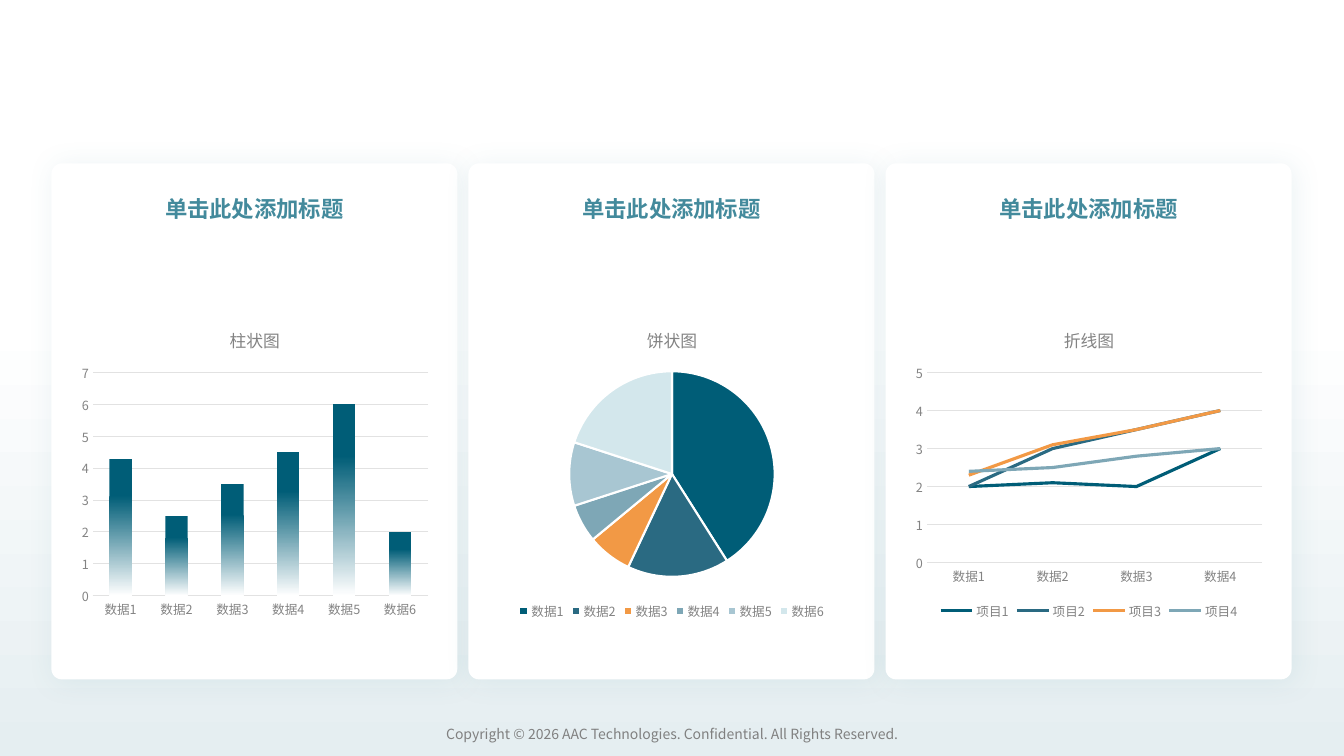
from lxml.etree import SubElement
from pptx import Presentation
from pptx.chart.data import CategoryChartData
from pptx.dml.color import RGBColor
from pptx.enum.chart import XL_CHART_TYPE, XL_LEGEND_POSITION, XL_TICK_MARK
from pptx.enum.shapes import MSO_SHAPE
from pptx.enum.text import MSO_ANCHOR, PP_ALIGN
from pptx.oxml import parse_xml
from pptx.oxml.ns import nsdecls, qn
from pptx.util import Inches, Pt

FACE = "Noto Sans CJK SC"
WHITE = RGBColor(0xFF, 0xFF, 0xFF)
MIST = RGBColor(0xE5, 0xEE, 0xF1)
TEAL = RGBColor(0x43, 0x8A, 0x9C)
GRAY = RGBColor(0x80, 0x80, 0x80)
LABEL = RGBColor(0x83, 0x83, 0x83)
RULE = RGBColor(0xE2, 0xE2, 0xE2)
DEEP = RGBColor(0x00, 0x5D, 0x77)
COLORS = [DEEP, RGBColor(0x2A, 0x6A, 0x82), RGBColor(0xF2, 0x99, 0x45),
          RGBColor(0x7E, 0xA7, 0xB6), RGBColor(0xA8, 0xC6, 0xD2),
          RGBColor(0xD3, 0xE7, 0xEC)]
SHADOW = f"""<a:effectLst {nsdecls('a')}>
<a:outerShdw blurRad="{Pt(20)}" dist="{Pt(3)}" dir="2160000" algn="ctr" rotWithShape="0">
<a:srgbClr val="{TEAL}"><a:alpha val="10000"/></a:srgbClr>
</a:outerShdw></a:effectLst>"""

CHARTS = [
    ("柱状图", XL_CHART_TYPE.COLUMN_CLUSTERED, 6, 7,
     {"柱状图": [4.3, 2.5, 3.5, 4.5, 6, 2]}),
    ("饼状图", XL_CHART_TYPE.PIE, 6, None,
     {"饼状图": [41, 16, 7, 6, 10, 20]}),
    ("折线图", XL_CHART_TYPE.LINE, 4, 5,
     {"项目1": [2, 2.1, 2, 3], "项目2": [2, 3, 3.5, 4],
      "项目3": [2.3, 3.1, 3.5, 4], "项目4": [2.4, 2.5, 2.8, 3]}),
]

deck = Presentation()
deck.slide_width, deck.slide_height = Inches(13.34), Inches(7.5)
slide = deck.slides.add_slide(deck.slide_layouts[6])
shapes = slide.shapes


def style(font, size, color, bold=False):
    """Set the face for both Latin and East Asian text."""
    font.size, font.bold = Pt(size), bold
    font.color.rgb = color
    font.name = FACE
    SubElement(font._rPr, qn("a:ea")).set("typeface", FACE)


def write(text, left, top, width, height, **look):
    frame = shapes.add_textbox(Inches(left), Inches(top),
                               Inches(width), Inches(height)).text_frame
    frame.word_wrap = True
    frame.vertical_anchor = MSO_ANCHOR.MIDDLE
    line = frame.paragraphs[0]
    line.alignment = PP_ALIGN.CENTER
    run = line.add_run()
    run.text = text
    style(run.font, **look)


# Background and footer
back = shapes.add_shape(MSO_SHAPE.RECTANGLE, 0, 0, deck.slide_width, deck.slide_height)
back.shadow.inherit = False
back.line.fill.background()
back.fill.gradient()
back.fill.gradient_angle = 270
for stop, spot, color in zip(back.fill.gradient_stops, (0.42, 1), (WHITE, MIST)):
    stop.position, stop.color.rgb = spot, color
write("Copyright © 2026 AAC Technologies. Confidential. All Rights Reserved.",
      3.12, 7.15, 7.1, 0.27, size=10, color=GRAY)

# Three cards, each with a heading and a chart
for col, (name, kind, count, top, series) in enumerate(CHARTS):
    left = 0.51 + col * 4.14
    card = shapes.add_shape(MSO_SHAPE.ROUNDED_RECTANGLE, Inches(left), Inches(1.62),
                            Inches(4.03), Inches(5.12))
    card.adjustments[0] = 0.026
    card.fill.solid()
    card.fill.fore_color.rgb = WHITE
    card.line.fill.background()
    card._element.spPr.append(parse_xml(SHADOW))
    write("单击此处添加标题", left + 0.68, 1.88, 2.67, 0.37,
          size=16, color=TEAL, bold=True)

    data = CategoryChartData()
    data.categories = [f"数据{n}" for n in range(1, count + 1)]
    for label, values in series.items():
        data.add_series(label, values)
    chart = shapes.add_chart(kind, Inches(left + 0.23), Inches(3.08),
                             Inches(3.58), Inches(3.11), data).chart
    style(chart.font, 9, LABEL)
    chart.has_title = True
    title = chart.chart_title.text_frame
    title.text = name
    style(title.paragraphs[0].runs[0].font, 12, LABEL)
    chart.chart_title.include_in_layout = False
    chart.has_legend = kind != XL_CHART_TYPE.COLUMN_CLUSTERED
    if chart.has_legend:
        chart.legend.position = XL_LEGEND_POSITION.BOTTOM
        chart.legend.include_in_layout = False
        style(chart.legend.font, 9, LABEL)

    plot = chart.plots[0]
    plot.vary_by_categories = kind == XL_CHART_TYPE.PIE
    if kind != XL_CHART_TYPE.PIE:
        value, cat = chart.value_axis, chart.category_axis
        value.minimum_scale, value.maximum_scale, value.major_unit = 0, top, 1
        value.format.line.fill.background()
        for axis in (value, cat):
            axis.major_tick_mark = axis.minor_tick_mark = XL_TICK_MARK.NONE
            style(axis.tick_labels.font, 9, LABEL)
        for line in (value.major_gridlines.format.line, cat.format.line):
            line.color.rgb, line.width = RULE, Pt(0.75)

    if kind == XL_CHART_TYPE.COLUMN_CLUSTERED:
        plot.gap_width = 150
        fill = plot.series[0].format.fill
        fill.gradient()
        fill.gradient_angle = 270
        for stop, spot, color in zip(fill.gradient_stops, (0.27, 1), (DEEP, WHITE)):
            stop.position, stop.color.rgb = spot, color
    elif kind == XL_CHART_TYPE.PIE:
        for n, color in enumerate(COLORS):
            slice = plot.series[0].points[n].format
            slice.fill.solid()
            slice.fill.fore_color.rgb = color
            slice.line.color.rgb, slice.line.width = WHITE, Pt(1.5)
    else:
        for item, color in zip(plot.series, COLORS):
            item.smooth = False
            item.format.line.color.rgb = color
            item.format.line.width = Pt(2.25)

deck.save("out.pptx")
